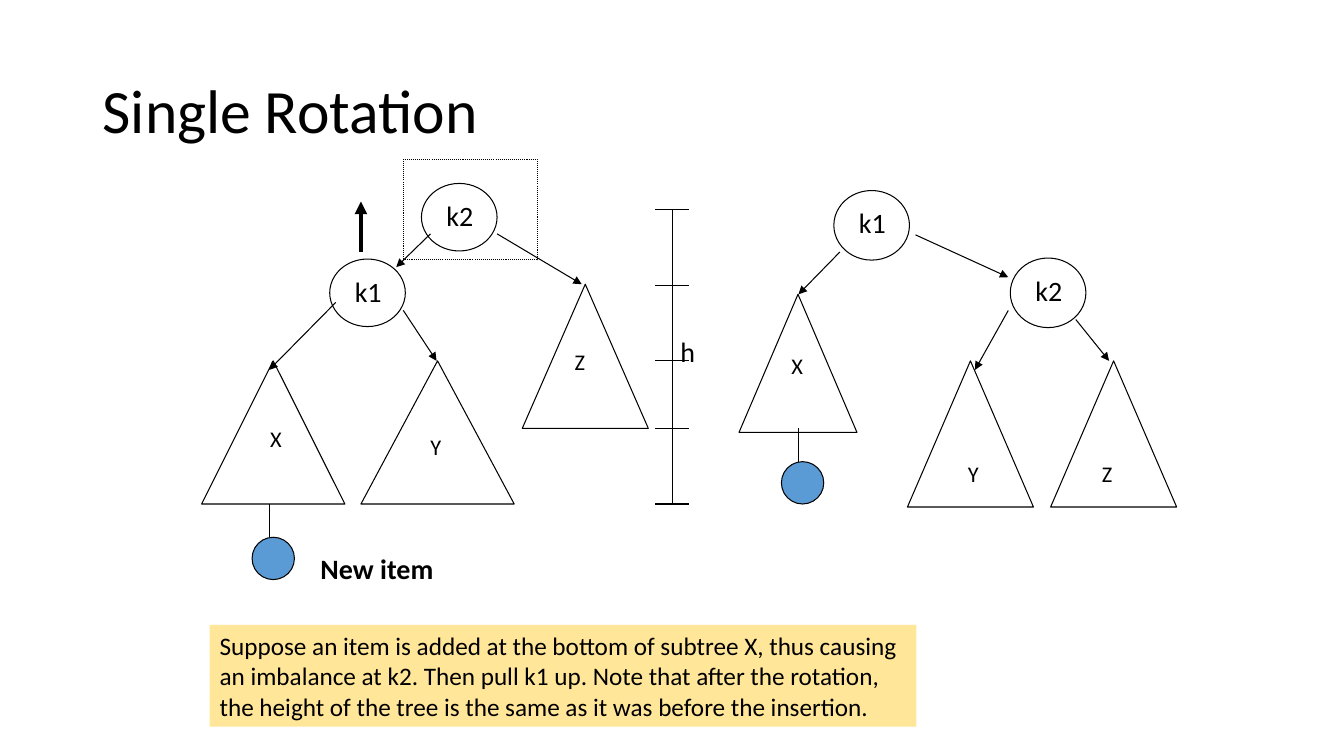
"""Build the Single Rotation slide: a search tree before and after pulling k1 up."""
from dataclasses import dataclass
from typing import Optional

from lxml.etree import SubElement
from pptx import Presentation
from pptx.dml.color import RGBColor
from pptx.enum.dml import MSO_LINE_DASH_STYLE as Dash
from pptx.enum.shapes import MSO_CONNECTOR as Connector, MSO_SHAPE as Shape
from pptx.enum.text import MSO_ANCHOR as Anchor, MSO_AUTO_SIZE as AutoSize, PP_ALIGN as Align
from pptx.oxml.ns import qn
from pptx.util import Inches, Pt

BLACK = RGBColor(0x00, 0x00, 0x00)
ITEM_BLUE = RGBColor(0x5B, 0x9B, 0xD5)
NOTE_YELLOW = RGBColor(0xFF, 0xE6, 0x99)
FONT = "Calibri"


@dataclass(frozen=True)
class Node:
    name: str
    left: float
    top: float
    height: float


@dataclass(frozen=True)
class Subtree:
    name: str
    left: float
    top: float
    width: float
    height: float
    label_left: float
    label_top: float


@dataclass(frozen=True)
class Edge:
    x1: float
    y1: float
    x2: float
    y2: float
    arrow: bool = True
    weight: float = 0.75


@dataclass(frozen=True)
class NewItem:
    left: float
    top: float
    stem: float


NODES = [
    Node("k2", 4.18, 1.82, 0.67),
    Node("k1", 3.27, 2.57, 0.67),
    Node("k2", 10.02, 2.56, 0.69),
    Node("k1", 8.27, 1.89, 0.69),
]
SUBTREES = [
    Subtree("X", 2, 3.58, 1.42, 1.42, 2.58, 4.17),
    Subtree("Y", 3.58, 3.58, 1.52, 1.42, 4.17, 4.25),
    Subtree("Z", 5.18, 2.82, 1.25, 1.43, 5.6, 3.4),
    Subtree("X", 7.33, 2.92, 1.17, 1.37, 7.75, 3.44),
    Subtree("Y", 9, 3.58, 1.25, 1.45, 9.5, 4.52),
    Subtree("Z", 10.42, 3.58, 1.25, 1.45, 10.83, 4.52),
]
EDGES = [
    Edge(3.33, 3, 2.67, 3.67),
    Edge(4.93, 2.32, 5.77, 2.82),
    Edge(4, 3.08, 4.33, 3.58),
    Edge(4.27, 2.32, 3.93, 2.65),
    Edge(8.33, 2.5, 7.92, 2.92),
    Edge(10.67, 3.17, 11, 3.58),
    Edge(9.08, 2.33, 10, 2.75),
    Edge(10, 3.08, 9.67, 3.67),
    Edge(3.58, 2.5, 3.58, 2, weight=3),
]
NEW_ITEMS = [NewItem(2.5, 5.33, 2.67), NewItem(7.75, 4.58, 7.92)]
LEVELS = [2.08, 2.83, 3.58, 4.25, 5]
NOTE_LINES = [
    "Suppose an item is added at the bottom of subtree X, thus causing",
    "an imbalance at k2. Then pull k1 up. Note that after the rotation,",
    "the height of the tree is the same as it was before the insertion.",
]


def write(shape, lines: list[str], size: float, bold: bool = False) -> None:
    """Fill a shape's text frame with left-aligned lines."""
    frame = shape.text_frame
    frame.word_wrap = False
    frame.auto_size = AutoSize.SHAPE_TO_FIT_TEXT
    for index, line in enumerate(lines):
        para = frame.add_paragraph() if index else frame.paragraphs[0]
        para.alignment = Align.LEFT
        span = para.add_run()
        span.text = line
        span.font.name, span.font.size, span.font.bold = FONT, Pt(size), bold
        span.font.color.rgb = BLACK


def add_label(page, text: str, left: float, top: float, width: float,
              height: float, size: float, bold: bool = False):
    """Add a one-line text box."""
    box = page.shapes.add_textbox(Inches(left), Inches(top), Inches(width), Inches(height))
    write(box, [text], size, bold)
    return box


def add_outline(page, kind: Shape, left: float, top: float, width: float,
                height: float, fill: Optional[RGBColor] = None):
    """Add a thin black outline, hollow unless a fill is given."""
    shape = page.shapes.add_shape(
        kind, Inches(left), Inches(top), Inches(width), Inches(height))
    shape.shadow.inherit = False
    if fill is None:
        shape.fill.background()
    else:
        shape.fill.solid()
        shape.fill.fore_color.rgb = fill
    shape.line.color.rgb = BLACK
    shape.line.width = Pt(0.75)
    return shape


def add_edge(page, edge: Edge) -> None:
    """Add a straight line, with an arrowhead if asked."""
    line = page.shapes.add_connector(
        Connector.STRAIGHT, Inches(edge.x1), Inches(edge.y1), Inches(edge.x2), Inches(edge.y2))
    line.line.color.rgb = BLACK
    line.line.width = Pt(edge.weight)
    if edge.arrow:
        SubElement(line.line._get_or_add_ln(), qn("a:tailEnd"), type="triangle")
    SubElement(line._element.spPr, qn("a:effectLst"))


def add_node(page, node: Node) -> None:
    """Add a circled key."""
    add_outline(page, Shape.OVAL, node.left, node.top, 0.75, node.height)
    add_label(page, node.name, node.left + 0.15, node.top + 0.1, 0.48, 0.43, 20)


def add_subtree(page, tree: Subtree) -> None:
    """Add a triangle with its letter."""
    add_outline(page, Shape.FLOWCHART_EXTRACT, tree.left, tree.top, tree.width, tree.height)
    add_label(page, tree.name, tree.label_left, tree.label_top, 0.31, 0.37, 16)


def add_new_item(page, item: NewItem) -> None:
    """Add the inserted item hanging below its subtree."""
    add_outline(page, Shape.OVAL, item.left, item.top, 0.42, 0.42, ITEM_BLUE)
    add_edge(page, Edge(item.stem, item.top - 0.33, item.stem, item.top, arrow=False))


def add_height_scale(page) -> None:
    """Add the vertical scale with a tick at each level."""
    add_edge(page, Edge(6.67, LEVELS[0], 6.67, LEVELS[-1], arrow=False))
    for level in LEVELS:
        add_edge(page, Edge(6.5, level, 6.83, level, arrow=False))
    add_label(page, "h", 6.65, 3.27, 0.35, 0.44, 20)


def main() -> None:
    """Draw the slide and save it."""
    deck = Presentation()
    deck.slide_width, deck.slide_height = Inches(13.33), Inches(7.5)
    page = deck.slides.add_slide(deck.slide_layouts[6])

    title = add_label(page, "Single Rotation", 0.92, 0.4, 11.5, 1.45, 44)
    title.text_frame.auto_size = AutoSize.NONE
    title.text_frame.word_wrap = True
    title.text_frame.vertical_anchor = Anchor.MIDDLE
    title.text_frame.paragraphs[0].line_spacing = 0.9

    for node in NODES:
        add_node(page, node)
    for tree in SUBTREES:
        add_subtree(page, tree)
    for edge in EDGES:
        add_edge(page, edge)
    add_height_scale(page)

    note = add_outline(page, Shape.RECTANGLE, 2.08, 6.2, 7.01, 1.01, NOTE_YELLOW)
    note.line.fill.background()
    write(note, NOTE_LINES, 18)

    frame = add_outline(page, Shape.RECTANGLE, 4, 1.58, 1.33, 1)
    frame.line.dash_style = Dash.ROUND_DOT
    for item in NEW_ITEMS:
        add_new_item(page, item)
    add_label(page, "New item", 3.08, 5.42, 1.32, 0.43, 20, bold=True)

    deck.save("out.pptx")


if __name__ == "__main__":
    main()
